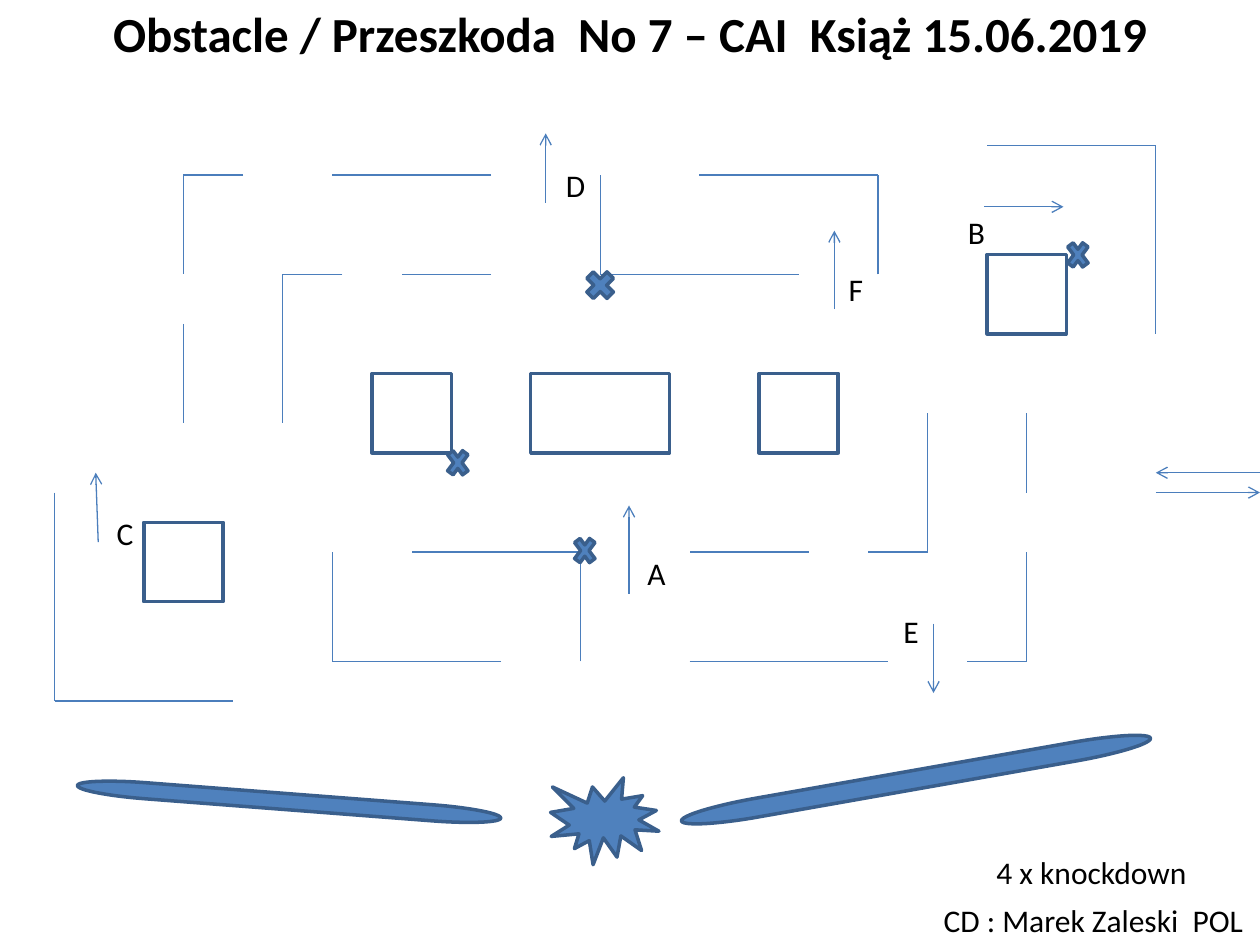
import itertools
import pptx
import pptx.util
import pptx.dml.color
import pptx.enum.shapes
import pptx.enum.text
import pptx.oxml
import pptx.oxml.ns

RGBColor = pptx.dml.color.RGBColor
SHAPE = pptx.enum.shapes.MSO_SHAPE
ALIGN = pptx.enum.text.PP_ALIGN
ANCHOR = pptx.enum.text.MSO_ANCHOR
Inches = pptx.util.Inches

BLACK = RGBColor(0x00, 0x00, 0x00)
LINE = RGBColor(0x4B, 0x7E, 0xBC)
EDGE = RGBColor(0x3A, 0x5F, 0x8C)
BLUE = RGBColor(0x4F, 0x81, 0xBD)

WIDTH, HEIGHT = 10, 7.5
COLUMNS = 127
PITCH = WIDTH / COLUMNS
SLIDE_BOX = (0, 0, WIDTH, HEIGHT)
COURSE_BOX = (PITCH * 0.5, PITCH * 0.65, WIDTH, HEIGHT)

WALLS = [
    [(60, 17), (60, 27), (80, 27)],
    [(93, 41), (93, 55), (87, 55)],
    [(88, 27), (88, 17), (70, 17)],
    [(103, 41), (103, 49)],
    [(116, 33), (116, 14), (99, 14)],
    [(103, 55), (103, 66), (97, 66)],
    [(81, 55), (69, 55)],
    [(58, 66), (58, 55), (41, 55)],
    [(69, 66), (89, 66)],
    [(50, 66), (33, 66), (33, 55)],
    [(49, 27), (40, 27)],
    [(34, 27), (28, 27), (28, 42)],
    [(49, 17), (33, 17)],
    [(24, 17), (18, 17), (18, 27)],
    [(18, 32), (18, 42)],
    [(5, 49), (5, 70), (23, 70)],
]
BLOCKS = [(53, 37, 14), (76, 37, 8), (37, 37, 8), (99, 25, 8), (14, 52, 8)]
BLOCK_ROWS = 8
ENTRY_EXIT = [((126.5, 47), (116, 47)), ((116, 49), (126.5, 49))]
GATES = [
    ("A", (63.5, 54.6), (62.9, 59.2), (62.9, 50.3)),
    ("B", (95.8, 20.2), (98.7, 20.2), (106.7, 20.2)),
    ("C", (10, 50.5), (9.4, 54), (9.15, 47)),
    ("D", (55.3, 15.5), (54.5, 19.8), (54.5, 12.8)),
    ("E", (89.3, 60.4), (93.6, 62.2), (93.6, 69.2)),
    ("F", (83.8, 25.9), (83.6, 30.5), (83.6, 22.6)),
]
MARKERS = [(106.7, 23.1, 2.9), (44.2, 44.05, 2.9), (57, 52.9, 2.9), (58.05, 26.15, 3.9)]
MARKER_ROWS = 3.9


def on_grid(box, col, row, cols=0, rows=0):
    x, y, w, h = box
    pitch = w / COLUMNS
    return x + col * pitch, y + row * pitch, cols * pitch, rows * pitch


def by_share(box, left, top, width, height):
    x, y, w, h = box
    return x + left * w, y + top * h, width * w, height * h


def add_text(s, box, text, size=18, bold=False, align=ALIGN.LEFT, anchor=ANCHOR.TOP, wrap=False):
    tf = s.shapes.add_textbox(*map(Inches, box)).text_frame
    tf.word_wrap = wrap
    tf.vertical_anchor = anchor
    p = tf.paragraphs[0]
    p.alignment = align
    r = p.add_run()
    r.text = text
    r.font.name = "Calibri"
    r.font.size = pptx.util.Pt(size)
    r.font.bold = bold
    r.font.color.rgb = BLACK


def add_shape(s, kind, box, fill=BLUE, rotation=0):
    sp = s.shapes.add_shape(kind, *map(Inches, box))
    sp.shadow.inherit = False
    sp.rotation = rotation
    if fill is None:
        sp.fill.background()
    else:
        sp.fill.solid()
        sp.fill.fore_color.rgb = fill
    sp.line.color.rgb = EDGE
    sp.line.width = pptx.util.Pt(2)


def add_line(s, box, start, end, arrow=False):
    ends = on_grid(box, *start)[:2] + on_grid(box, *end)[:2]
    line = s.shapes.add_connector(
        pptx.enum.shapes.MSO_CONNECTOR.STRAIGHT, *map(Inches, ends))
    line.line.color.rgb = LINE
    line.line.width = pptx.util.Pt(0.75)
    if arrow:
        tail = pptx.oxml.parse_xml(
            f'<a:tailEnd {pptx.oxml.ns.nsdecls("a")} type="arrow"/>')
        line.line._get_or_add_ln().append(tail)
    line._element.spPr.append(
        pptx.oxml.parse_xml(f'<a:effectLst {pptx.oxml.ns.nsdecls("a")}/>'))


def add_title(s, box):
    add_text(s, by_share(box, 0, 0, 1, 0.07),
             "Obstacle / Przeszkoda  No 7 – CAI  Książ 15.06.2019",
             size=28, bold=True, align=ALIGN.CENTER, anchor=ANCHOR.MIDDLE, wrap=True)


def add_course(s, box):
    for wall in WALLS:
        for start, end in itertools.pairwise(wall):
            add_line(s, box, start, end)
    for col, row, cols in BLOCKS:
        add_shape(s, SHAPE.RECTANGLE, on_grid(box, col, row, cols, BLOCK_ROWS), fill=None)
    for start, end in ENTRY_EXIT:
        add_line(s, box, start, end, arrow=True)


def add_gates(s, box):
    for letter, place, start, end in GATES:
        add_line(s, box, start, end, arrow=True)
        add_text(s, on_grid(box, *place, 4.3, 5.1), letter)
    for col, row, cols in MARKERS:
        add_shape(s, SHAPE.MATH_MULTIPLY, on_grid(box, col, row, cols, MARKER_ROWS))


def add_scenery(s, box):
    x, y, w, h = box
    add_shape(s, SHAPE.EXPLOSION1, (x + 0.437 * w, y + 0.823 * h, 0.086 * w, 0.092 * h))
    for left, top, width, height, rotation in [
        (0.538, 0.815, 0.378, 0.02, 350),
        (0.061, 0.84, 0.337, 0.017, 4.4),
    ]:
        add_shape(s, SHAPE.FLOWCHART_TERMINATOR,
                  by_share(box, left, top, width, height), rotation=rotation)


def add_notes(s, box):
    add_text(s, by_share(box, 0.781, 0.896, 0.173, 0.053), "4 x knockdown")
    add_text(s, by_share(box, 0.739, 0.947, 0.261, 0.053), "CD : Marek Zaleski  POL")


def main():
    prs = pptx.Presentation()
    prs.slide_width = Inches(WIDTH)
    prs.slide_height = Inches(HEIGHT)
    s = prs.slides.add_slide(prs.slide_layouts[6])
    add_title(s, SLIDE_BOX)
    add_course(s, COURSE_BOX)
    add_scenery(s, SLIDE_BOX)
    add_gates(s, COURSE_BOX)
    add_notes(s, SLIDE_BOX)
    prs.save("out.pptx")


if __name__ == "__main__":
    main()
